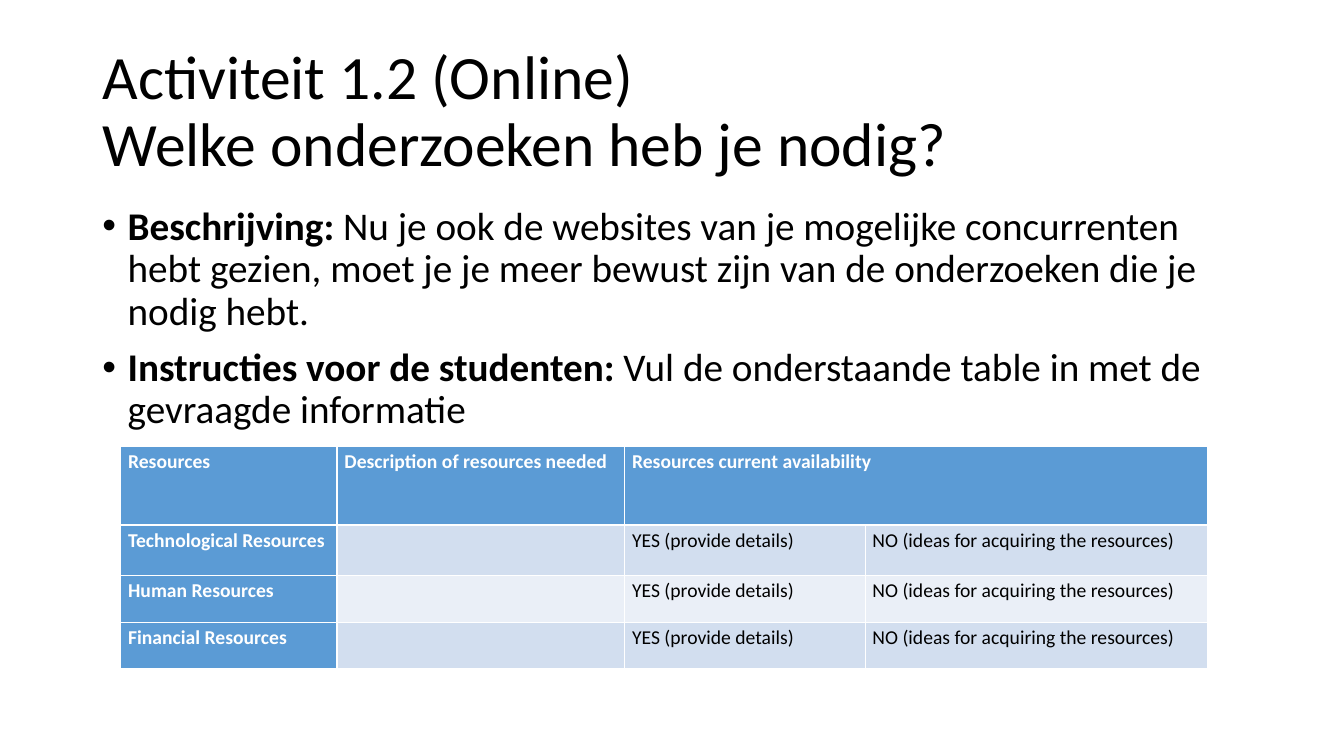
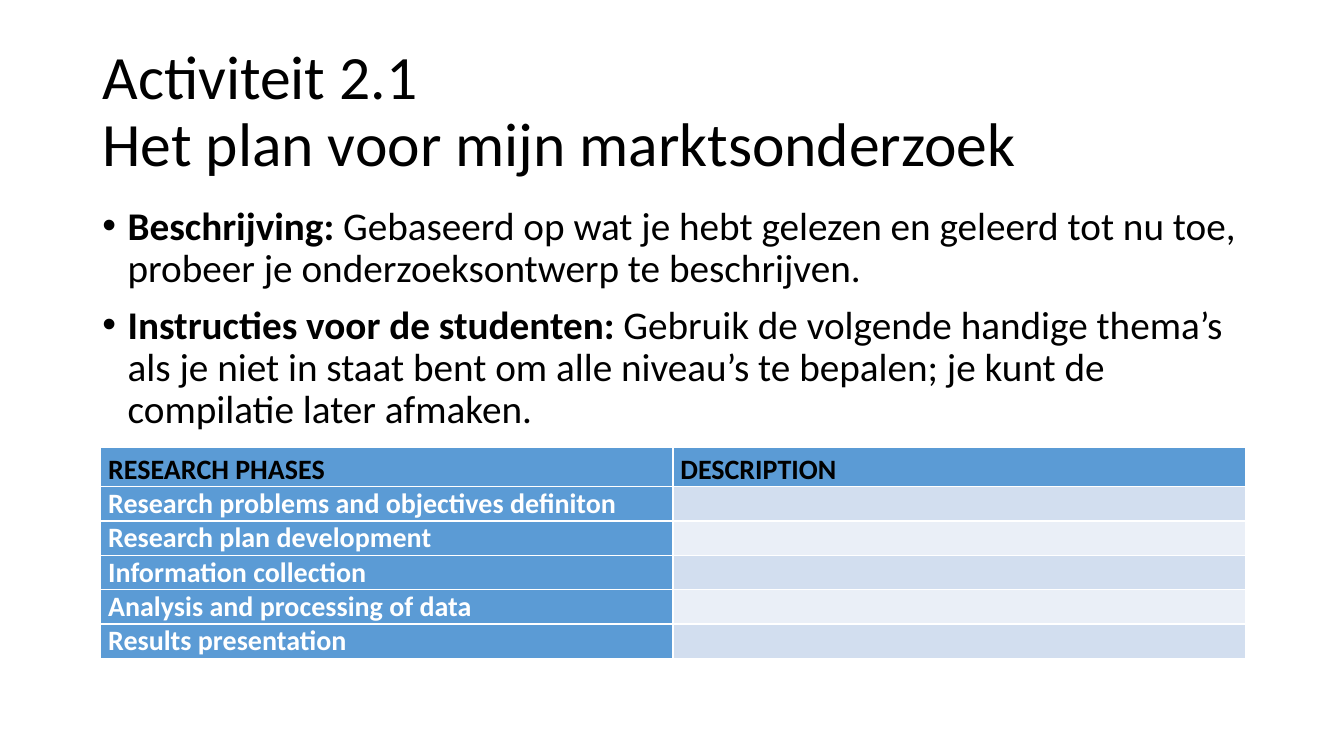
"""Build two activity slides, each with a title, two bullets and a table."""
from pptx import Presentation
from pptx.dml.color import RGBColor
from pptx.enum.text import MSO_ANCHOR, MSO_AUTO_SIZE, PP_ALIGN
from pptx.util import Emu, Pt

FONT = "Calibri"
BLACK, WHITE, BLUE = "000000", "FFFFFF", "5B9BD5"
BANDS = ("D2DEEF", "EAEFF7")
TITLE = (88, 38, 1104, 139)
BODY = (88, 192, 1104, 457)
INDENT = 24
CHOICE = ("", "YES (provide details)", "NO (ideas for acquiring the resources)")

PAGES = [
    {
        "title": ("Activiteit 1.2 (Online)", "Welke onderzoeken heb je nodig?"),
        "points": [
            ("Beschrijving: ", "Nu je ook de websites van je mogelijke concurrenten hebt gezien, "
             "moet je je meer bewust zijn van de onderzoeken die je nodig hebt."),
            ("Instructies voor de studenten: ",
             "Vul de onderstaande table in met de gevraagde informatie"),
        ],
        "at": (115, 425),
        "cols": (206, 274, 229, 326),
        "rows": (75, 48, 45, 44),
        "cells": [
            ("Resources", "Description of resources needed", "Resources current availability"),
            ("Technological Resources", *CHOICE),
            ("Human Resources", *CHOICE),
            ("Financial Resources", *CHOICE),
        ],
        "size": 14, "head": WHITE, "space": 1.15, "after": 10,
    },
    {
        "title": ("Activiteit 2.1", "Het plan voor mijn marktsonderzoek"),
        "points": [
            ("Beschrijving: ", "Gebaseerd op wat je hebt gelezen en geleerd tot nu toe, "
             "probeer je onderzoeksontwerp te beschrijven."),
            ("Instructies voor de studenten: ",
             "Gebruik de volgende handige thema’s als je niet in staat bent om alle niveau’s "
             "te bepalen; je kunt de compilatie later afmaken."),
        ],
        "at": (96, 426),
        "cols": (545, 545),
        "rows": (37, 32, 32, 32, 32, 32),
        "cells": [
            ("RESEARCH PHASES", "DESCRIPTION"),
            ("Research problems and objectives definiton", ""),
            ("Research plan development", ""),
            ("Information collection", ""),
            ("Analysis and processing of data", ""),
            ("Results presentation", ""),
        ],
        "size": 20, "head": BLACK, "space": 1.0, "after": 0,
    },
]


def px(count):
    return Emu(count * 9525)


def color(code):
    return RGBColor.from_string(code)


def style(run, size, code=BLACK, bold=False):
    font = run.font
    font.name, font.size, font.bold = FONT, Pt(size), bold
    font.color.rgb = color(code)


def place(shape, box):
    shape.left, shape.top, shape.width, shape.height = map(px, box)


def add_title(slide, lines):
    frame = slide.shapes.title.text_frame
    frame.text = "\v".join(lines)
    frame.auto_size = MSO_AUTO_SIZE.NONE
    frame.vertical_anchor = MSO_ANCHOR.MIDDLE
    para = frame.paragraphs[0]
    para.alignment, para.line_spacing = PP_ALIGN.LEFT, 0.9
    for run in para.runs:
        style(run, 44)


def add_points(slide, points):
    frame = slide.placeholders[1].text_frame
    frame.auto_size = MSO_AUTO_SIZE.NONE
    for num, (label, text) in enumerate(points):
        para = frame.add_paragraph() if num else frame.paragraphs[0]
        para.text = label
        para.add_run().text = text
        para.line_spacing, para.space_before = 0.9, Pt(10)
        props = para._p.get_or_add_pPr()
        props.set("marL", str(px(INDENT)))
        props.set("indent", str(-px(INDENT)))
        for run, bold in zip(para.runs, (True, False)):
            style(run, 28, bold=bold)


def fill_cell(cell, text, row, col, page):
    edge = row == 0 or col == 0
    cell.fill.solid()
    cell.fill.fore_color.rgb = color(BLUE if edge else BANDS[(row - 1) % 2])
    cell.margin_left = cell.margin_right = px(7)
    cell.margin_top = cell.margin_bottom = 0
    cell.text = text
    para = cell.text_frame.paragraphs[0]
    para.line_spacing = page["space"] if row else 1.15
    para.space_after = Pt(page["after"])
    para._p.get_or_add_endParaRPr().set("sz", str(page["size"] * 100))
    code = page["head"] if row == 0 else WHITE if col == 0 else BLACK
    for run in para.runs:
        style(run, page["size"], code, edge)


def add_grid(slide, page):
    cols, rows = page["cols"], page["rows"]
    box = (*page["at"], sum(cols), sum(rows))
    grid = slide.shapes.add_table(len(rows), len(cols), *map(px, box)).table
    grid.first_col = True
    for part, size in zip(grid.columns, cols):
        part.width = px(size)
    for part, size in zip(grid.rows, rows):
        part.height = px(size)
    for row, texts in enumerate(page["cells"]):
        for col, text in enumerate(texts):
            fill_cell(grid.cell(row, col), text, row, col, page)
        if len(texts) < len(cols):
            grid.cell(row, len(texts) - 1).merge(grid.cell(row, len(cols) - 1))


def main():
    deck = Presentation()
    deck.slide_width, deck.slide_height = px(1280), px(720)
    layout = deck.slide_layouts[1]
    for shape, box in zip(layout.placeholders, (TITLE, BODY)):
        place(shape, box)
    for page in PAGES:
        slide = deck.slides.add_slide(layout)
        add_title(slide, page["title"])
        add_points(slide, page["points"])
        add_grid(slide, page)
    deck.save("out.pptx")


if __name__ == "__main__":
    main()
